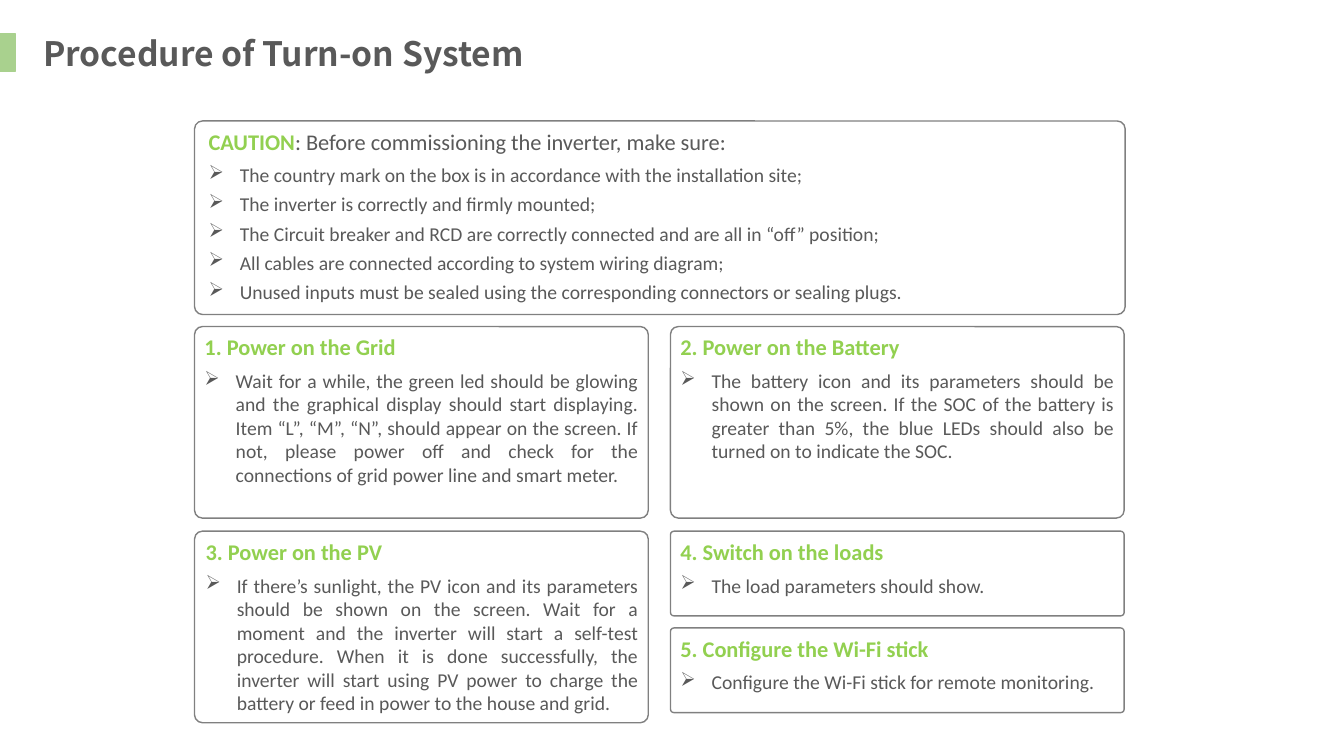
"""Build the slide on the procedure of turning on the system."""
from dataclasses import dataclass

from lxml.etree import SubElement
from pptx import Presentation
from pptx.dml.color import RGBColor
from pptx.enum.shapes import MSO_SHAPE as Preset
from pptx.enum.text import MSO_AUTO_SIZE as AutoSize, PP_ALIGN as Align
from pptx.oxml.ns import qn
from pptx.util import Inches, Pt

GREEN, GREY, OUTLINE, ACCENT = "92D050", "595959", "808080", "A9D18E"
LEFT, RIGHT, COLUMN, INDENT = 1.93, 6.65, 4.5, 0.31
GRID_TOP, PV_TOP, WIFI_TOP = 3.24, 5.27, 6.23
TALL, SHORT = 1.9, 0.84


@dataclass
class Panel:
    left: float
    top: float
    width: float
    height: float
    heading: str
    bullets: list[str]
    lead: str = ""
    inset: float = 0.0


PANELS = [
    Panel(LEFT, 1.2, 9.23, 1.92, "CAUTION", [
        "The country mark on the box is in accordance with the installation site;",
        "The inverter is correctly and firmly mounted;",
        "The Circuit breaker and RCD are correctly connected and are all in “off” position;",
        "All cables are connected according to system wiring diagram;",
        "Unused inputs must be sealed using the corresponding connectors or sealing plugs.",
    ], lead=": Before commissioning the inverter, make sure:", inset=0.04),
    Panel(LEFT, GRID_TOP, COLUMN, TALL, "1. Power on the Grid", [
        "Wait for a while, the green led should be glowing and the graphical display "
        "should start displaying. Item “L”, “M”, “N”, should appear on the screen. "
        "If not, please power off and check for the connections of grid power line "
        "and smart meter."]),
    Panel(RIGHT, GRID_TOP, COLUMN, TALL, "2. Power on the Battery", [
        "The battery icon and its parameters should be shown on the screen. If the SOC "
        "of the battery is greater than 5%, the blue LEDs should also be turned on to "
        "indicate the SOC."]),
    Panel(LEFT, PV_TOP, COLUMN, TALL, "3. Power on the PV", [
        "If there’s sunlight, the PV icon and its parameters should be shown on the "
        "screen. Wait for a moment and the inverter will start a self-test procedure. "
        "When it is done successfully, the inverter will start using PV power to charge "
        "the battery or feed in power to the house and grid."], inset=0.01),
    Panel(RIGHT, PV_TOP, COLUMN, SHORT, "4. Switch on the loads",
          ["The load parameters should show."]),
    Panel(RIGHT, WIFI_TOP, COLUMN, SHORT, "5. Configure the Wi-Fi stick",
          ["Configure the Wi-Fi stick for remote monitoring."]),
]


def color(value: str) -> RGBColor:
    return RGBColor.from_string(value)


def add_text(para, text: str, *, size: float = 14, shade: str = GREY,
             bold: bool = False, font: str = "Calibri") -> None:
    span = para.add_run()
    span.text = text
    span.font.size = Pt(size)
    span.font.color.rgb = color(shade)
    span.font.bold = bold
    span.font.name = font


def add_box(page, left: float, top: float, width: float, height: float,
            wrap: bool = True):
    box = page.shapes.add_textbox(*map(Inches, (left, top, width, height)))
    box.text_frame.word_wrap = wrap
    box.text_frame.auto_size = AutoSize.SHAPE_TO_FIT_TEXT
    return box.text_frame


def add_bullet(para) -> None:
    layout = para._p.get_or_add_pPr()
    layout.set("marL", str(Inches(INDENT)))
    layout.set("indent", str(-Inches(INDENT)))
    SubElement(layout, qn("a:buChar")).set("char", "➢")


def add_shape(page, preset: Preset, left: float, top: float, width: float,
              height: float, line: str):
    shape = page.shapes.add_shape(preset, *map(Inches, (left, top, width, height)))
    shape.shadow.inherit = False
    shape.line.color.rgb = color(line)
    shape.line.width = Pt(1)
    return shape


def add_panel(page, panel: Panel) -> None:
    frame = add_shape(page, Preset.ROUNDED_RECTANGLE, panel.left, panel.top,
                      panel.width, panel.height, OUTLINE)
    frame.fill.background()
    frame.adjustments[0] = 0.041
    body = add_box(page, panel.left + panel.inset, panel.top + 0.02,
                   panel.width - panel.inset, panel.height - 0.06)
    heading = body.paragraphs[0]
    heading.alignment = Align.JUSTIFY
    add_text(heading, panel.heading, size=16, shade=GREEN, bold=True)
    if panel.lead:
        add_text(heading, panel.lead, size=16)
    for index, bullet in enumerate(panel.bullets):
        para = body.add_paragraph()
        add_bullet(para)
        para.alignment = Align.JUSTIFY
        para.space_before = Pt(4 if index else 6)
        add_text(para, bullet)


def main() -> None:
    deck = Presentation()
    deck.slide_width, deck.slide_height = Inches(13.33), Inches(7.5)
    page = deck.slides.add_slide(deck.slide_layouts[6])
    marker = add_shape(page, Preset.RECTANGLE, 0, 0.33, 0.15, 0.38, ACCENT)
    marker.fill.solid()
    marker.fill.fore_color.rgb = color(ACCENT)
    title = add_box(page, 0.33, 0.28, 5.12, 0.5, wrap=False)
    add_text(title.paragraphs[0], "Procedure of Turn-on System", size=24, bold=True,
             font="Noto Sans CJK SC")
    for panel in PANELS:
        add_panel(page, panel)
    deck.save("out.pptx")


if __name__ == "__main__":
    main()
